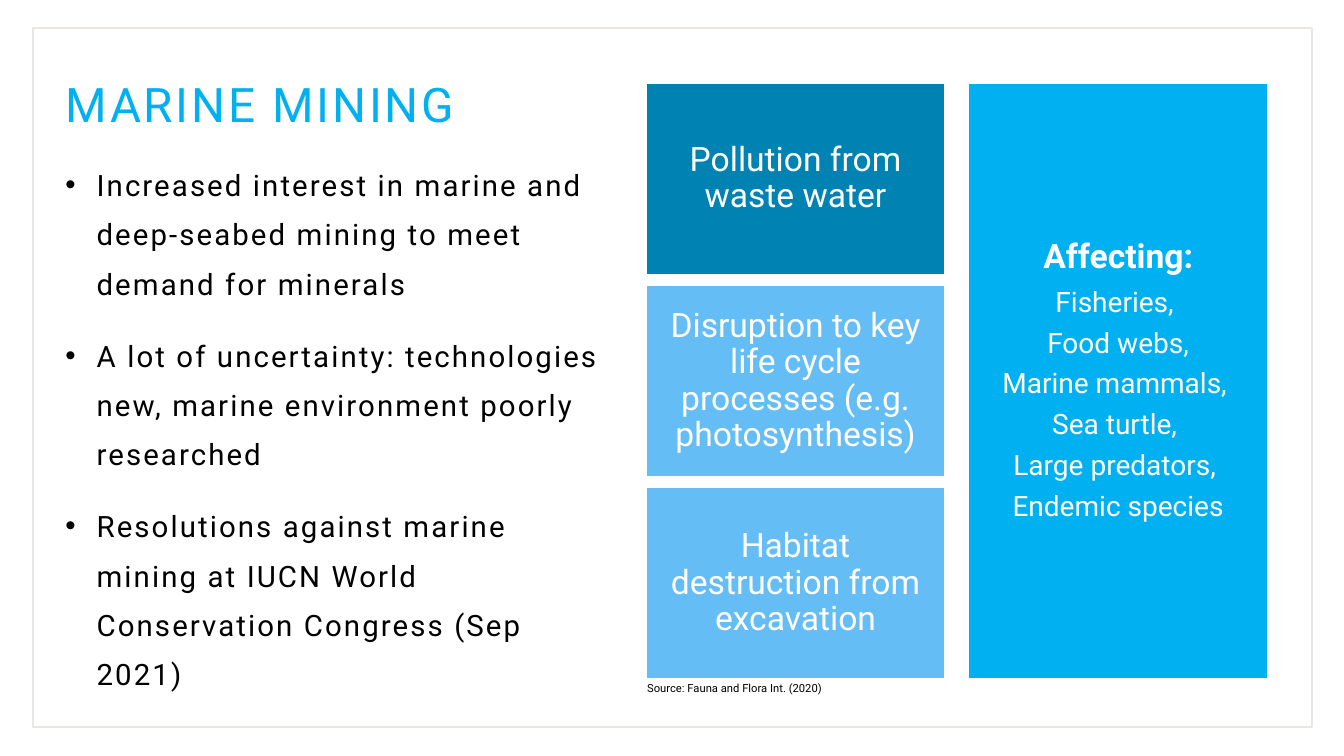
"""Build the marine mining slide with its impact blocks."""
from dataclasses import dataclass

from lxml import etree
from pptx import Presentation
from pptx.dml.color import RGBColor
from pptx.enum.shapes import MSO_SHAPE as Shape
from pptx.enum.text import MSO_ANCHOR as Anchor, PP_ALIGN as Align
from pptx.oxml.ns import qn
from pptx.util import Inches, Pt

WHITE = RGBColor(0xFF, 0xFF, 0xFF)
BLACK = RGBColor(0, 0, 0)
CYAN = RGBColor(0x00, 0xB0, 0xF0)
TEAL = RGBColor(0x00, 0x82, 0xB2)
SKY = RGBColor(0x64, 0xBD, 0xF4)
FRAME_GREY = RGBColor(0xEA, 0xE6, 0xE3)

BLOCK_WIDTH = 2.98
BLOCK_TOP = 0.82
COLUMN_HEIGHT = 5.92
IMPACT_HEIGHT = 1.91
IMPACT_STEP = (COLUMN_HEIGHT - IMPACT_HEIGHT) / 2

POINTS = [
    "Increased interest in marine and deep-seabed mining to meet demand for minerals",
    "A lot of uncertainty: technologies new, marine environment poorly researched",
    "Resolutions against marine mining at IUCN World Conservation Congress (Sep 2021)",
]
IMPACTS = [
    ("Pollution from waste water", TEAL),
    ("Disruption to key life cycle processes (e.g. photosynthesis)", SKY),
    ("Habitat destruction from excavation", SKY),
]
AFFECTED = ["Fisheries, ", "Food webs,", "Marine mammals, ", "Sea turtle, ",
            "Large predators, ", "Endemic species"]


@dataclass
class Block:
    left: float
    top: float
    height: float
    fill: RGBColor
    heading: str
    items: tuple = ()


def add_text(frame, text: str, *, size: float, color: RGBColor = BLACK, bold: bool = False,
             align=Align.LEFT, line_spacing: float = 1.0, before: float = 0,
             after: float = 0, tracking: float = 0, bullet_indent: float = 0) -> None:
    first = not frame.paragraphs[0].runs
    paragraph = frame.paragraphs[0] if first else frame.add_paragraph()
    paragraph.alignment = align
    paragraph.line_spacing = line_spacing
    paragraph.space_before = Pt(0 if first else before)
    paragraph.space_after = Pt(after)
    if bullet_indent:
        properties = paragraph._p.get_or_add_pPr()
        properties.set("marL", str(Inches(bullet_indent)))
        properties.set("indent", str(-Inches(bullet_indent)))
        etree.SubElement(properties, qn("a:buFont")).set("typeface", "Arial")
        etree.SubElement(properties, qn("a:buChar")).set("char", "•")
    run = paragraph.add_run()
    run.text = text
    run.font.name = "Roboto"
    run.font.size = Pt(size)
    run.font.bold = bold
    run.font.color.rgb = color
    if tracking:
        run._r.get_or_add_rPr().set("spc", str(int(tracking * 100)))


def add_box(slide, left: float, top: float, width: float, height: float):
    box = slide.shapes.add_textbox(Inches(left), Inches(top), Inches(width), Inches(height))
    box.text_frame.word_wrap = True
    return box.text_frame


def add_rectangle(slide, left: float, top: float, width: float, height: float,
                  line: RGBColor, line_width: float):
    shape = slide.shapes.add_shape(Shape.RECTANGLE, Inches(left), Inches(top),
                                   Inches(width), Inches(height))
    shape.shadow.inherit = False
    shape.fill.background()
    shape.line.color.rgb = line
    shape.line.width = Pt(line_width)
    return shape


def add_block(slide, block: Block) -> None:
    shape = add_rectangle(slide, block.left, block.top, BLOCK_WIDTH, block.height, WHITE, 2)
    shape.fill.solid()
    shape.fill.fore_color.rgb = block.fill
    frame = shape.text_frame
    frame.word_wrap = True
    frame.vertical_anchor = Anchor.MIDDLE
    frame.margin_left = frame.margin_right = Inches(0.07)
    frame.margin_top = frame.margin_bottom = Inches(0.07)
    style = dict(color=WHITE, align=Align.CENTER, line_spacing=0.9)
    add_text(frame, block.heading, size=24, bold=bool(block.items), after=8.5, **style)
    for item in block.items:
        add_text(frame, item, size=20, after=7.5, **style)


def main() -> None:
    presentation = Presentation()
    presentation.slide_width = Inches(13.33)
    presentation.slide_height = Inches(7.5)
    slide = presentation.slides.add_slide(presentation.slide_layouts[6])

    title = add_box(slide, 0.55, 0.76, 12.2, 0.57)
    add_text(title, "MARINE MINING", size=34, color=CYAN, line_spacing=0.9, tracking=2)
    body = add_box(slide, 0.55, 1.47, 5.62, 5.27)
    for point in POINTS:
        add_text(body, point, size=21, line_spacing=1.4, before=10, after=6,
                 tracking=1.5, bullet_indent=0.31)
    add_rectangle(slide, 0.33, 0.28, 12.68, 6.93, FRAME_GREY, 1.5)
    source = add_box(slide, 6.32, 6.71, 2.18, 0.24)
    add_text(source, "Source: Fauna and Flora Int. (2020)", size=8)

    blocks = [Block(6.4, BLOCK_TOP + row * IMPACT_STEP, IMPACT_HEIGHT, fill, text)
              for row, (text, fill) in enumerate(IMPACTS)]
    blocks.append(Block(9.6, BLOCK_TOP, COLUMN_HEIGHT, CYAN, "Affecting:", tuple(AFFECTED)))
    for block in blocks:
        add_block(slide, block)
    presentation.save("out.pptx")


if __name__ == "__main__":
    main()
